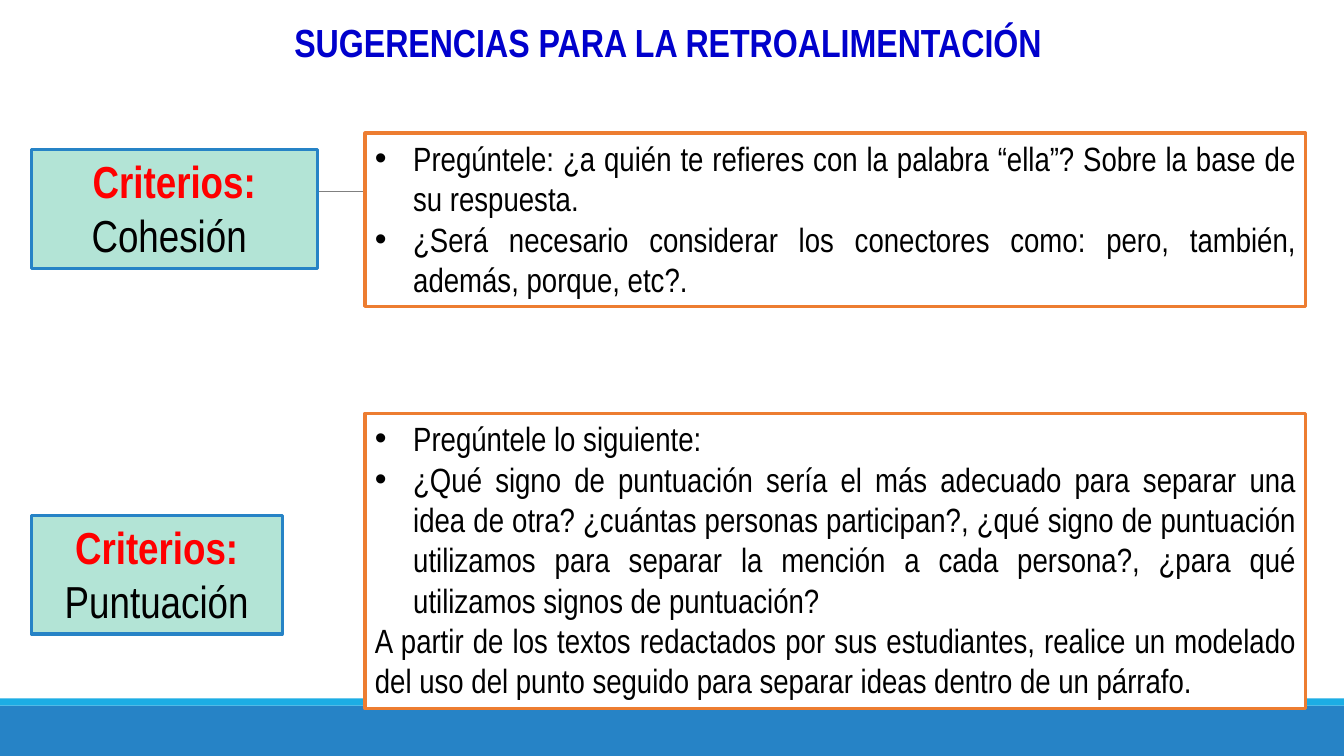
from lxml.etree import SubElement
from pptx import Presentation
from pptx.dml.color import RGBColor
from pptx.enum.shapes import MSO_CONNECTOR, MSO_SHAPE
from pptx.enum.text import MSO_ANCHOR, MSO_AUTO_SIZE, PP_ALIGN
from pptx.oxml.ns import qn
from pptx.util import Inches, Pt

FONT = "Arial Narrow"
WHITE = RGBColor(0xFF, 0xFF, 0xFF)
BLACK = RGBColor(0x00, 0x00, 0x00)
RED = RGBColor(0xFF, 0x00, 0x00)
NAVY = RGBColor(0x00, 0x00, 0xCC)
BLUE = RGBColor(0x26, 0x83, 0xC6)
CYAN = RGBColor(0x1C, 0xAD, 0xE4)
MINT = RGBColor(0xB3, 0xE4, 0xD6)
ORANGE = RGBColor(0xED, 0x7D, 0x31)
GRAY = RGBColor(0x80, 0x80, 0x80)

WIDE, HIGH = 13.33, 7.5
LEFT = 0.31
NOTE_X, NOTE_W = 3.62, 9.33
INDENT = Inches(0.38)

ROWS = [
    ("Cohesión ", (LEFT, 1.48, 2.84, 1.18), (NOTE_X, 1.32, NOTE_W, 1.72), [
        ("Pregúntele: ¿a quién te refieres con la palabra “ella”? "
         "Sobre la base de su respuesta.", True),
        ("¿Será necesario considerar los conectores como: pero, también, "
         "además, porque, etc?.", True),
    ]),
    ("Puntuación", (LEFT, 5.11, 2.49, 1.18), (NOTE_X, 4.1, NOTE_W, 2.93), [
        ("Pregúntele lo siguiente: ", True),
        ("¿Qué signo de puntuación sería el más adecuado para separar una "
         "idea de otra? ¿cuántas personas participan?, ¿qué signo de "
         "puntuación utilizamos para separar la mención a cada persona?, "
         "¿para qué utilizamos signos de puntuación?", True),
        ("A partir de los textos redactados por sus estudiantes, realice un "
         "modelado del uso del punto seguido para separar ideas dentro de un "
         "párrafo.", False),
    ]),
]


def add_box(slide, box, fill, line=None):
    """Draw a flat rectangle, outlined when a line colour is given."""
    shape = slide.shapes.add_shape(MSO_SHAPE.RECTANGLE, *map(Inches, box))
    shape.shadow.inherit = False
    shape.fill.solid()
    shape.fill.fore_color.rgb = fill
    if line is None:
        shape.line.fill.background()
    else:
        shape.line.color.rgb = line
        shape.line.width = Pt(2.25)
    return shape


def set_frame(shape):
    """Make the text wrap, start at the top and fit its shape."""
    frame = shape.text_frame
    frame.word_wrap = True
    frame.auto_size = MSO_AUTO_SIZE.SHAPE_TO_FIT_TEXT
    frame.vertical_anchor = MSO_ANCHOR.TOP
    return frame


def add_text(frame, index, text, size, color, align, bold=False):
    """Write one paragraph as a single run."""
    para = frame.add_paragraph() if index else frame.paragraphs[0]
    para.alignment = align
    run = para.add_run()
    run.text = text
    font = run.font
    font.name, font.size, font.bold = FONT, Pt(size), bold
    font.color.rgb = color
    return para


def add_bullet(para):
    """Give a paragraph a round bullet and a hanging indent."""
    props = para._p.get_or_add_pPr()
    props.set("marL", str(INDENT))
    props.set("indent", str(-INDENT))
    SubElement(props, qn("a:buFont")).set("typeface", "Arial")
    SubElement(props, qn("a:buChar")).set("char", "•")


def add_back(slide, box):
    """Draw the footer bands and the thin rule."""
    x, y, wide, high = box
    foot, strip = 0.5, 0.07
    top = y + high - foot
    add_box(slide, (x, top, wide, foot), BLUE)
    add_box(slide, (x, top - strip, wide, strip), CYAN)
    ends = (x + 1.31, y + 1.9, x + 12.21, y + 1.9)
    rule = slide.shapes.add_connector(MSO_CONNECTOR.STRAIGHT, *map(Inches, ends))
    rule.line.color.rgb = GRAY
    rule.line.width = Pt(0.5)
    SubElement(rule._element.spPr, qn("a:effectLst"))


def add_title(slide, box):
    """Place and format the title."""
    title = slide.shapes.title
    title.left, title.top, title.width, title.height = map(Inches, box)
    add_text(set_frame(title), 0, "SUGERENCIAS PARA LA RETROALIMENTACIÓN",
             28, NAVY, PP_ALIGN.CENTER, True)


def add_label(slide, box, name):
    """Draw the box that names a criterion."""
    frame = set_frame(add_box(slide, box, MINT, BLUE))
    add_text(frame, 0, "Criterios:", 32, RED, PP_ALIGN.CENTER, True)
    add_text(frame, 1, name, 32, BLACK, PP_ALIGN.CENTER)


def add_notes(slide, box, notes):
    """Draw the box of suggestions for a criterion."""
    frame = set_frame(add_box(slide, box, WHITE, ORANGE))
    for index, (text, mark) in enumerate(notes):
        para = add_text(frame, index, text, 24, BLACK, PP_ALIGN.JUSTIFY)
        if mark:
            add_bullet(para)


def main():
    """Build the slide and save it."""
    deck = Presentation()
    deck.slide_width, deck.slide_height = Inches(WIDE), Inches(HIGH)
    slide = deck.slides.add_slide(deck.slide_layouts[5])
    add_back(slide, (0, 0, WIDE, HIGH))
    add_title(slide, (0.53, 0.13, 12.19, 0.57))
    for name, label, panel, notes in ROWS:
        add_label(slide, label, name)
        add_notes(slide, panel, notes)
    deck.save("out.pptx")


if __name__ == "__main__":
    main()
